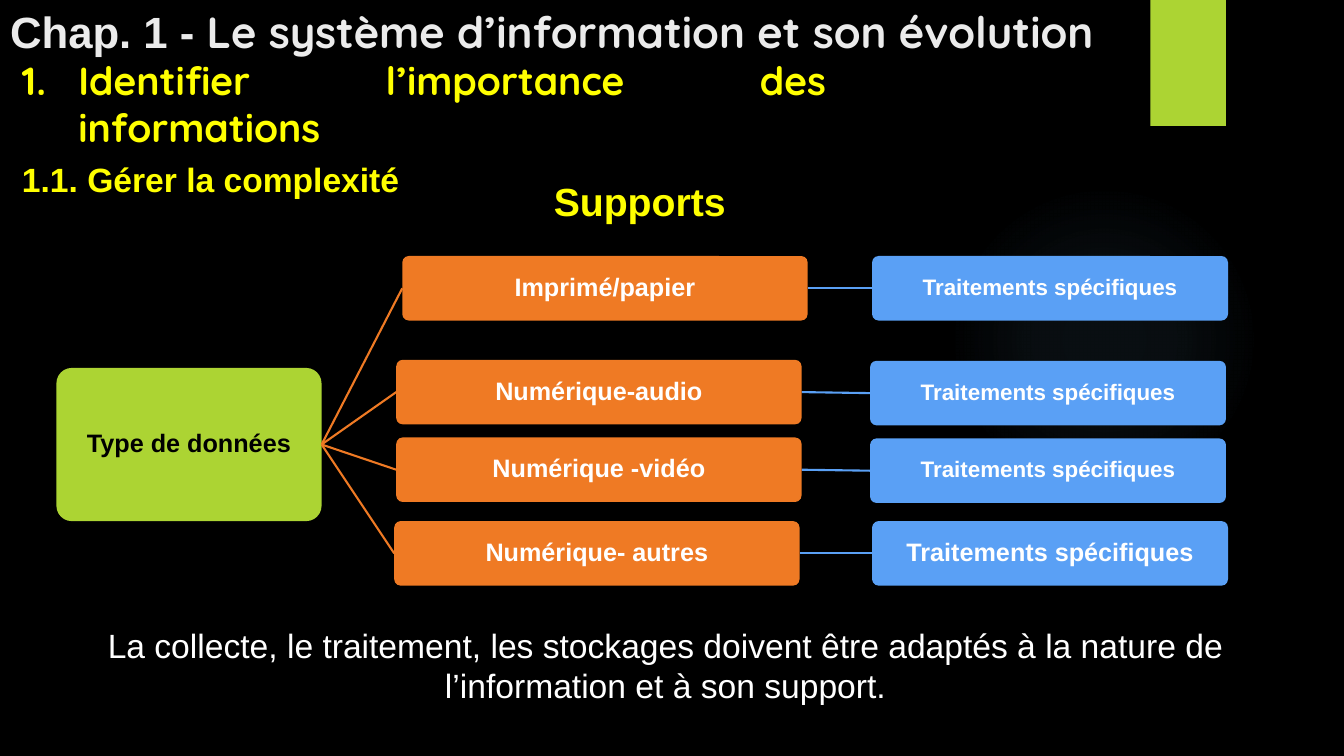
from dataclasses import dataclass

from pptx import Presentation
from pptx.dml.color import RGBColor as RGB
from pptx.enum.shapes import MSO_CONNECTOR as LINE, MSO_SHAPE as SHAPE
from pptx.enum.text import MSO_ANCHOR as ANCHOR, MSO_AUTO_SIZE as AUTO, PP_ALIGN as ALIGN
from pptx.oxml import parse_xml
from pptx.oxml.ns import nsdecls
from pptx.oxml.xmlchemy import OxmlElement as Element
from pptx.util import Inches, Pt

# Content
TITLE = [("Chap. 1 - ", "Arial"), ("Le système d’information et son évolution", "Quicksand")]
HEAD = "Identifier l’importance des informations"
SUB = "1.1. Gérer la complexité"
COLUMN = "Supports"
ROOT = "Type de données"
NOTE = ("La collecte, le traitement, les stockages doivent être adaptés "
        "à la nature de l’information et à son support.")
STEP = "Traitements spécifiques"
# Support, its left and top, then left, top and type size of its treatment
ROWS = [
    ("Imprimé/papier", 3.99, 2.54, 8.65, 2.54, 16),
    ("Numérique-audio", 3.93, 3.57, 8.63, 3.58, 16),
    ("Numérique -vidéo", 3.93, 4.34, 8.63, 4.35, 16),
    ("Numérique- autres", 3.91, 5.17, 8.65, 5.17, 18),
]


@dataclass(frozen=True)
class Theme:
    back: str = "000000"
    light: str = "FFFFFF"
    title: str = "EBEBEB"
    head: str = "FFFF00"
    green: str = "ACD433"
    orange: str = "EF7A24"
    blue: str = "5AA0F5"
    glow: str = "7AC4F0"
    title_size: float = 31.2
    head_size: int = 28
    text_size: int = 24
    node_size: int = 18


T = Theme()
SUPPORT_W, STEP_W, NODE_H = 4.02, 3.53, 0.64
ROOT_BOX = (0.56, 3.65, 2.63, 1.52)


def write(para, text, size, color, font="Arial", bold=True, align=None):
    run = para.add_run()
    run.text = text
    run.font.size, run.font.bold, run.font.name = Pt(size), bold, font
    run.font.color.rgb = RGB.from_string(color)
    if align is not None:
        para.alignment = align


def text_box(slide, *box):
    frame = slide.shapes.add_textbox(*map(Inches, box)).text_frame
    frame.word_wrap = True
    return frame


def block(slide, kind, box, color):
    shape = slide.shapes.add_shape(kind, *map(Inches, box))
    shape.shadow.inherit = False
    shape.line.fill.background()
    shape.fill.solid()
    shape.fill.fore_color.rgb = RGB.from_string(color)
    return shape


def node(slide, box, text, fill, size=T.node_size, color=T.light):
    shape = block(slide, SHAPE.ROUNDED_RECTANGLE, box, fill)
    shape.adjustments[0] = 0.1
    frame = shape.text_frame
    frame.word_wrap = True
    frame.vertical_anchor = ANCHOR.MIDDLE
    frame.margin_left = frame.margin_right = Inches(0.03)
    frame.margin_top = frame.margin_bottom = Inches(0.03)
    para = frame.paragraphs[0]
    para.line_spacing = 0.9
    write(para, text, size, color, align=ALIGN.CENTER)


def link(slide, start, end, color):
    line = slide.shapes.add_connector(LINE.STRAIGHT, *map(Inches, start + end))
    line.line.color.rgb = RGB.from_string(color)
    line.line.width = Pt(1.5)
    line._element.spPr.append(Element("a:effectLst"))


def add_glow(slide):
    shape = block(slide, SHAPE.OVAL, (9.41, 1.83, 3.08, 3.08), T.glow)
    stops = "".join(
        f'<a:gs pos="{pos * 1000}"><a:srgbClr val="{T.glow}">'
        f'<a:alpha val="{alpha * 1000}"/></a:srgbClr></a:gs>'
        for pos, alpha in [(0, 7), (36, 6), (69, 0)])
    grad = parse_xml(
        f'<a:gradFill {nsdecls("a")} rotWithShape="1"><a:gsLst>{stops}</a:gsLst>'
        '<a:path path="circle"><a:fillToRect l="50000" t="50000" r="50000" b="50000"/>'
        '</a:path></a:gradFill>')
    props = shape._element.spPr
    props.replace(props.find("{*}solidFill"), grad)


def add_title(slide):
    title = slide.shapes.title
    title.left, title.top, title.width, title.height = map(Inches, (0, 0, 12.39, 0.83))
    frame = title.text_frame
    frame.auto_size = AUTO.NONE
    frame.vertical_anchor = ANCHOR.TOP
    for text, font in TITLE:
        write(frame.paragraphs[0], text, T.title_size, T.title, font, align=ALIGN.LEFT)


def add_heads(slide):
    frame = text_box(slide, 0.12, 0.51, 8.17, 1.06)
    first = frame.paragraphs[0]
    props = first._p.get_or_add_pPr()
    props.set("marL", str(Inches(0.56)))
    props.set("indent", str(-Inches(0.56)))
    number = Element("a:buAutoNum")
    number.set("type", "arabicPeriod")
    props.append(number)
    write(first, HEAD, T.head_size, T.head, "Quicksand", align=ALIGN.JUSTIFY)
    second = frame.add_paragraph()
    second.space_before = Pt(6)
    write(second, SUB, T.text_size, T.head, align=ALIGN.JUSTIFY)


def add_tree(slide):
    left, top, width, height = ROOT_BOX
    hub = (left + width, top + height / 2)
    node(slide, ROOT_BOX, ROOT, T.green, color=T.back)
    for text, x, y, step_x, step_y, size in ROWS:
        mid, step_mid = y + NODE_H / 2, step_y + NODE_H / 2
        link(slide, hub, (x, mid), T.orange)
        link(slide, (x + SUPPORT_W, mid), (step_x, step_mid), T.blue)
        node(slide, (x, y, SUPPORT_W, NODE_H), text, T.orange)
        node(slide, (step_x, step_y, STEP_W, NODE_H), STEP, T.blue, size)


def main():
    deck = Presentation()
    deck.slide_width, deck.slide_height = Inches(13.33), Inches(7.5)
    slide = deck.slides.add_slide(deck.slide_layouts[5])
    slide.background.fill.solid()
    slide.background.fill.fore_color.rgb = RGB.from_string(T.back)

    # Backdrop
    add_glow(slide)
    block(slide, SHAPE.RECTANGLE, (11.41, 0, 0.75, 1.25), T.green)

    # Headings
    add_title(slide)
    add_heads(slide)
    column = text_box(slide, 0.19, 1.71, 12.31, 0.6)
    write(column.paragraphs[0], COLUMN, T.head_size, T.head, align=ALIGN.CENTER)

    # Diagram and closing note
    add_tree(slide)
    note = text_box(slide, 0.52, 6.15, 12.16, 0.91)
    write(note.paragraphs[0], NOTE, T.text_size, T.light, bold=False, align=ALIGN.CENTER)

    deck.save("out.pptx")


if __name__ == "__main__":
    main()
